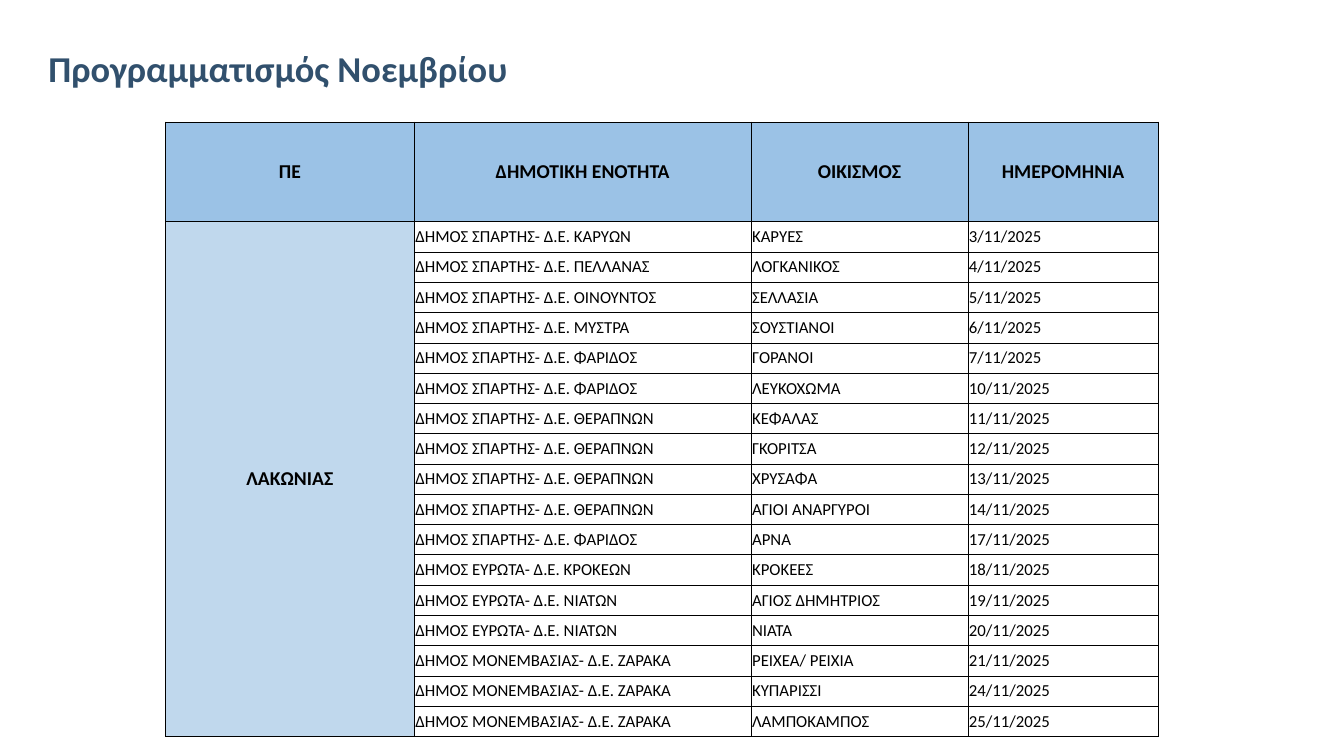
from lxml.etree import SubElement
from pptx import Presentation
from pptx.dml.color import RGBColor
from pptx.enum.text import MSO_ANCHOR as Anchor, PP_ALIGN as Align
from pptx.oxml.ns import qn
from pptx.util import Inches, Pt

HEADS = ["ΠΕ", "ΔΗΜΟΤΙΚΗ ΕΝΟΤΗΤΑ", "ΟΙΚΙΣΜΟΣ", "ΗΜΕΡΟΜΗΝΙΑ"]
WIDTHS = [2.47, 3.34, 2.15, 1.89]
VISITS = [
    ("ΣΠΑΡΤΗΣ", "ΚΑΡΥΩΝ", "ΚΑΡΥΕΣ", 3),
    ("ΣΠΑΡΤΗΣ", "ΠΕΛΛΑΝΑΣ", "ΛΟΓΚΑΝΙΚΟΣ", 4),
    ("ΣΠΑΡΤΗΣ", "ΟΙΝΟΥΝΤΟΣ", "ΣΕΛΛΑΣΙΑ", 5),
    ("ΣΠΑΡΤΗΣ", "ΜΥΣΤΡΑ", "ΣΟΥΣΤΙΑΝΟΙ", 6),
    ("ΣΠΑΡΤΗΣ", "ΦΑΡΙΔΟΣ", "ΓΟΡΑΝΟΙ", 7),
    ("ΣΠΑΡΤΗΣ", "ΦΑΡΙΔΟΣ", "ΛΕΥΚΟΧΩΜΑ", 10),
    ("ΣΠΑΡΤΗΣ", "ΘΕΡΑΠΝΩΝ", "ΚΕΦΑΛΑΣ", 11),
    ("ΣΠΑΡΤΗΣ", "ΘΕΡΑΠΝΩΝ", "ΓΚΟΡΙΤΣΑ", 12),
    ("ΣΠΑΡΤΗΣ", "ΘΕΡΑΠΝΩΝ", "ΧΡΥΣΑΦΑ", 13),
    ("ΣΠΑΡΤΗΣ", "ΘΕΡΑΠΝΩΝ", "ΑΓΙΟΙ ΑΝΑΡΓΥΡΟΙ", 14),
    ("ΣΠΑΡΤΗΣ", "ΦΑΡΙΔΟΣ", "ΑΡΝΑ", 17),
    ("ΕΥΡΩΤΑ", "ΚΡΟΚΕΩΝ", "ΚΡΟΚΕΕΣ", 18),
    ("ΕΥΡΩΤΑ", "ΝΙΑΤΩΝ", "ΑΓΙΟΣ ΔΗΜΗΤΡΙΟΣ", 19),
    ("ΕΥΡΩΤΑ", "ΝΙΑΤΩΝ", "ΝΙΑΤΑ", 20),
    ("ΜΟΝΕΜΒΑΣΙΑΣ", "ΖΑΡΑΚΑ", "ΡΕΙΧΕΑ/ ΡΕΙΧΙΑ", 21),
    ("ΜΟΝΕΜΒΑΣΙΑΣ", "ΖΑΡΑΚΑ", "ΚΥΠΑΡΙΣΣΙ", 24),
    ("ΜΟΝΕΜΒΑΣΙΑΣ", "ΖΑΡΑΚΑ", "ΛΑΜΠΟΚΑΜΠΟΣ", 25),
]


def write(frame, text, size=12, color="000000", bold=False, align=Align.LEFT):
    para = frame.paragraphs[0]
    para.alignment = align
    run = para.add_run()
    run.text = text
    font = run.font
    font.name, font.size, font.bold = "Calibri", Pt(size), bold
    font.color.rgb = RGBColor.from_string(color)
    return para


def dress(cell, fill):
    """Give a cell its margins, thin black borders and fill."""
    cell.margin_left = cell.margin_right = Inches(0.01)
    cell.margin_top = cell.margin_bottom = Inches(0.05)
    cell.vertical_anchor = Anchor.MIDDLE
    props = cell._tc.get_or_add_tcPr()
    for side in ("lnL", "lnR", "lnT", "lnB"):
        line = SubElement(props, qn(f"a:{side}"), w=str(Pt(0.5)))
        SubElement(SubElement(line, qn("a:solidFill")), qn("a:srgbClr"), val="000000")
    cell.fill.solid()
    cell.fill.fore_color.rgb = RGBColor.from_string(fill)


deck = Presentation()
deck.slide_width, deck.slide_height = Inches(13.33), Inches(7.5)
slide = deck.slides.add_slide(deck.slide_layouts[6])

# Title
box = slide.shapes.add_textbox(Inches(0.36), Inches(0.25), Inches(12.4), Inches(0.7))
frame = box.text_frame
frame.word_wrap = True
frame.vertical_anchor = Anchor.BOTTOM
frame.margin_left = Inches(0.12)
title = write(frame, "Προγραμματισμός Νοεμβρίου", size=26, color="31506D", bold=True)
title.line_spacing = 0.9

# Table: one header row, then one row per visit
count = len(VISITS) + 1
table = slide.shapes.add_table(count, len(HEADS), Inches(1.64), Inches(1.21),
                               Inches(sum(WIDTHS)), Inches(0.99 + 0.3 * len(VISITS))).table
table.first_row = table.horz_banding = False
for col, width in zip(table.columns, WIDTHS):
    col.width = Inches(width)
for num, row in enumerate(table.rows):
    row.height = Inches(0.3 if num else 0.99)
    for col, cell in enumerate(row.cells):
        dress(cell, "9BC2E6" if num == 0 else "C0D8ED" if col == 0 else "FFFFFF")

strong = dict(size=14, bold=True, align=Align.CENTER)
for col, head in enumerate(HEADS):
    write(table.cell(0, col).text_frame, head, **strong)

region = table.cell(1, 0)
region.merge(table.cell(count - 1, 0))
write(region.text_frame, "ΛΑΚΩΝΙΑΣ", **strong)

for num, (town, unit, place, day) in enumerate(VISITS, 1):
    texts = [f"ΔΗΜΟΣ {town}- Δ.Ε. {unit}", place, f"{day}/11/2025"]
    for col, text in enumerate(texts, 1):
        write(table.cell(num, col).text_frame, text)

deck.save("out.pptx")
